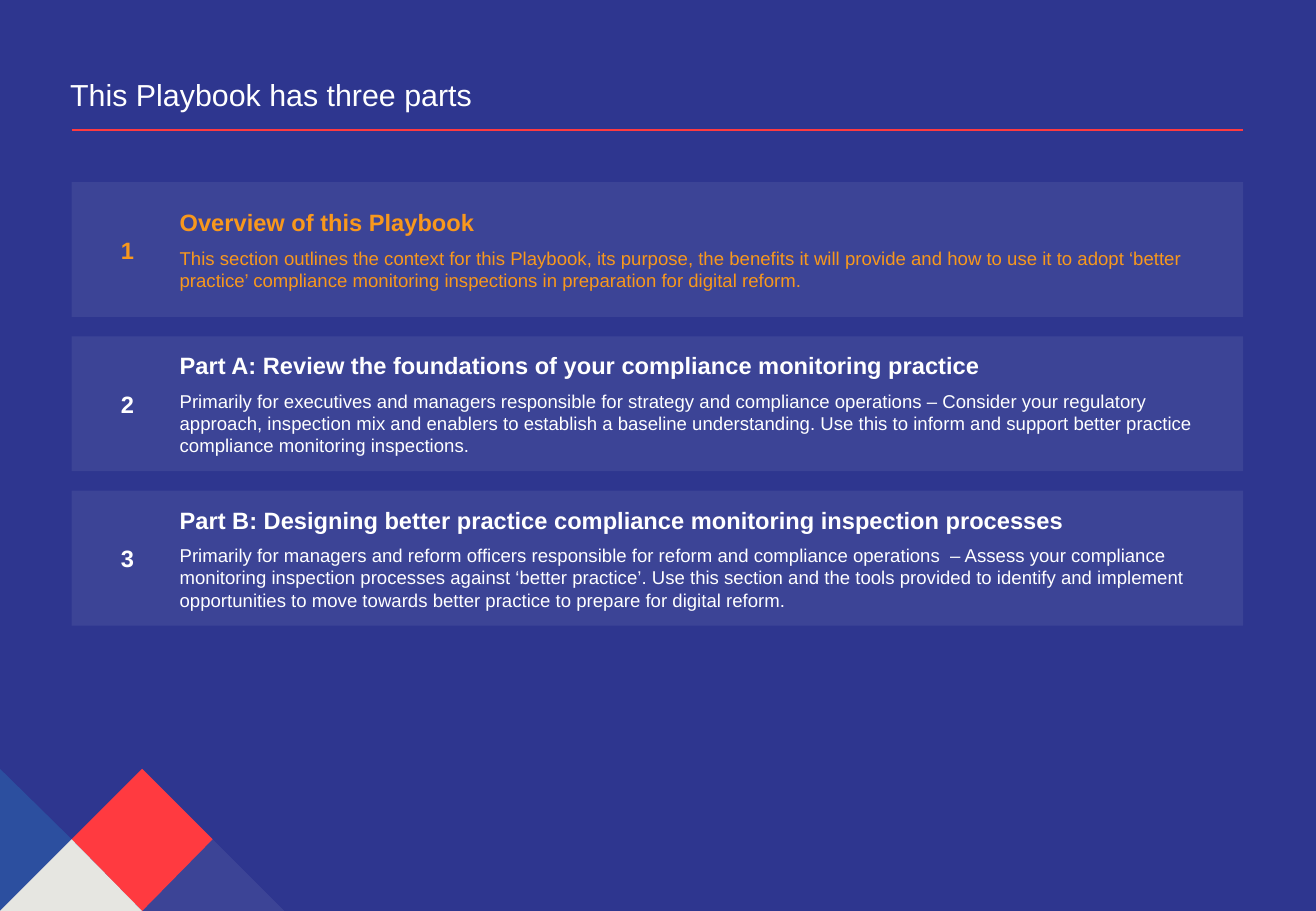
from lxml import etree
from pptx import Presentation
from pptx.dml.color import RGBColor
from pptx.enum.shapes import MSO_CONNECTOR as Connector, MSO_SHAPE as Shape
from pptx.enum.text import MSO_ANCHOR as Anchor, PP_ALIGN as Align
from pptx.oxml.ns import qn
from pptx.util import Inches, Pt

NAVY, RED, ORANGE, WHITE = "2E368F", "FF3A40", "F8981D", "FFFFFF"
CYAN, STONE = "25B3E0", "E6E6E1"
LEFT, WIDTH = 0.59, 9.64
CARD_TOP, CARD_HEIGHT, CARD_PITCH = 1.5, 1.11, 1.27
NUMBER_SIZE = 0.38

PARTS = [
    ("Overview of this Playbook",
     "This section outlines the context for this Playbook, its purpose, the benefits it will provide "
     "and how to use it to adopt ‘better practice’ compliance monitoring inspections in preparation "
     "for digital reform.", ORANGE),
    ("Part A: Review the foundations of your compliance monitoring practice",
     "Primarily for executives and managers responsible for strategy and compliance operations – "
     "Consider your regulatory approach, inspection mix and enablers to establish a baseline "
     "understanding. Use this to inform and support better practice compliance monitoring "
     "inspections.", WHITE),
    ("Part B: Designing better practice compliance monitoring inspection processes",
     "Primarily for managers and reform officers responsible for reform and compliance operations  – "
     "Assess your compliance monitoring inspection processes against ‘better practice’. Use this "
     "section and the tools provided to identify and implement opportunities to move towards better "
     "practice to prepare for digital reform.", WHITE),
]

CORNER_TILES = [
    ([(1.17, 6.33), (1.75, 6.91), (1.17, 7.5), (0.59, 6.91)], RED, 100),
    ([(0, 6.33), (0.59, 6.91), (0, 7.5)], CYAN, 20),
    ([(1.75, 6.91), (2.34, 7.5), (1.17, 7.5)], WHITE, 7),
    ([(0.59, 6.91), (1.17, 7.5), (0, 7.5)], STONE, 100),
]


def color(code):
    """Turn a hex string into a colour."""
    return RGBColor.from_string(code)


def paint(shape, code, opacity=100):
    """Fill a shape without line or shadow, at the given opacity in percent."""
    shape.shadow.inherit = False
    shape.line.fill.background()
    shape.fill.solid()
    shape.fill.fore_color.rgb = color(code)
    if opacity < 100:
        fill_color = shape.fill._xPr.find(qn("a:solidFill"))[0]
        etree.SubElement(fill_color, qn("a:alpha")).set("val", str(opacity * 1000))


def add_span(para, text, size, code, bold=False):
    """Add one run of text to a paragraph."""
    span = para.add_run()
    span.text = text
    span.font.name = "Arial"
    span.font.size = Pt(size)
    span.font.bold = bold
    span.font.color.rgb = color(code)


def add_label(page, place, text, size, code, anchor, align=Align.LEFT, bold=False):
    """Add a one-paragraph text box."""
    frame = page.shapes.add_textbox(*map(Inches, place)).text_frame
    frame.word_wrap = True
    frame.vertical_anchor = anchor
    para = frame.paragraphs[0]
    para.alignment = align
    add_span(para, text, size, code, bold)


def add_tile(page, points, code, opacity):
    """Add a filled polygon."""
    corners = [(Inches(x), Inches(y)) for x, y in points]
    builder = page.shapes.build_freeform(*corners[0])
    builder.add_line_segments(corners[1:])
    paint(builder.convert_to_shape(), code, opacity)


def add_rule(page, top):
    """Add the red line under the title."""
    rule = page.shapes.add_connector(
        Connector.STRAIGHT, Inches(LEFT), Inches(top), Inches(LEFT + WIDTH), Inches(top))
    rule.line.color.rgb = color(RED)
    rule.line.width = Pt(1.25)
    etree.SubElement(rule._element.spPr, qn("a:effectLst"))


def add_card(page, number, heading, summary, code):
    """Add a numbered card with a heading and a summary."""
    top = CARD_TOP + (number - 1) * CARD_PITCH
    card = page.shapes.add_shape(
        Shape.RECTANGLE, Inches(LEFT), Inches(top), Inches(WIDTH), Inches(CARD_HEIGHT))
    paint(card, WHITE, 7)
    frame = card.text_frame
    frame.word_wrap = True
    frame.vertical_anchor = Anchor.MIDDLE
    heading_para, summary_para = frame.paragraphs[0], frame.add_paragraph()
    for para in (heading_para, summary_para):
        para.alignment = Align.LEFT
        para.space_after = Pt(6)
        para._p.get_or_add_pPr().set("marL", str(Inches(0.79)))
    add_span(heading_para, heading, 14, code, bold=True)
    add_span(summary_para, summary, 11, code)
    number_top = top + (CARD_HEIGHT - NUMBER_SIZE) / 2
    add_label(page, (0.86, number_top, NUMBER_SIZE, NUMBER_SIZE), str(number), 14, code,
              Anchor.MIDDLE, Align.CENTER, bold=True)


def main():
    """Build the slide and save it."""
    deck = Presentation()
    deck.slide_width, deck.slide_height = Inches(10.83), Inches(7.5)
    page = deck.slides.add_slide(deck.slide_layouts[6])
    page.background.fill.solid()
    page.background.fill.fore_color.rgb = color(NAVY)
    for points, code, opacity in CORNER_TILES:
        add_tile(page, points, code, opacity)
    add_label(page, (0.48, 0.33, 9.76, 0.65), "This Playbook has three parts", 18, WHITE, Anchor.BOTTOM)
    add_rule(page, 1.07)
    for number, (heading, summary, code) in enumerate(PARTS, 1):
        add_card(page, number, heading, summary, code)
    deck.save("out.pptx")


if __name__ == "__main__":
    main()
